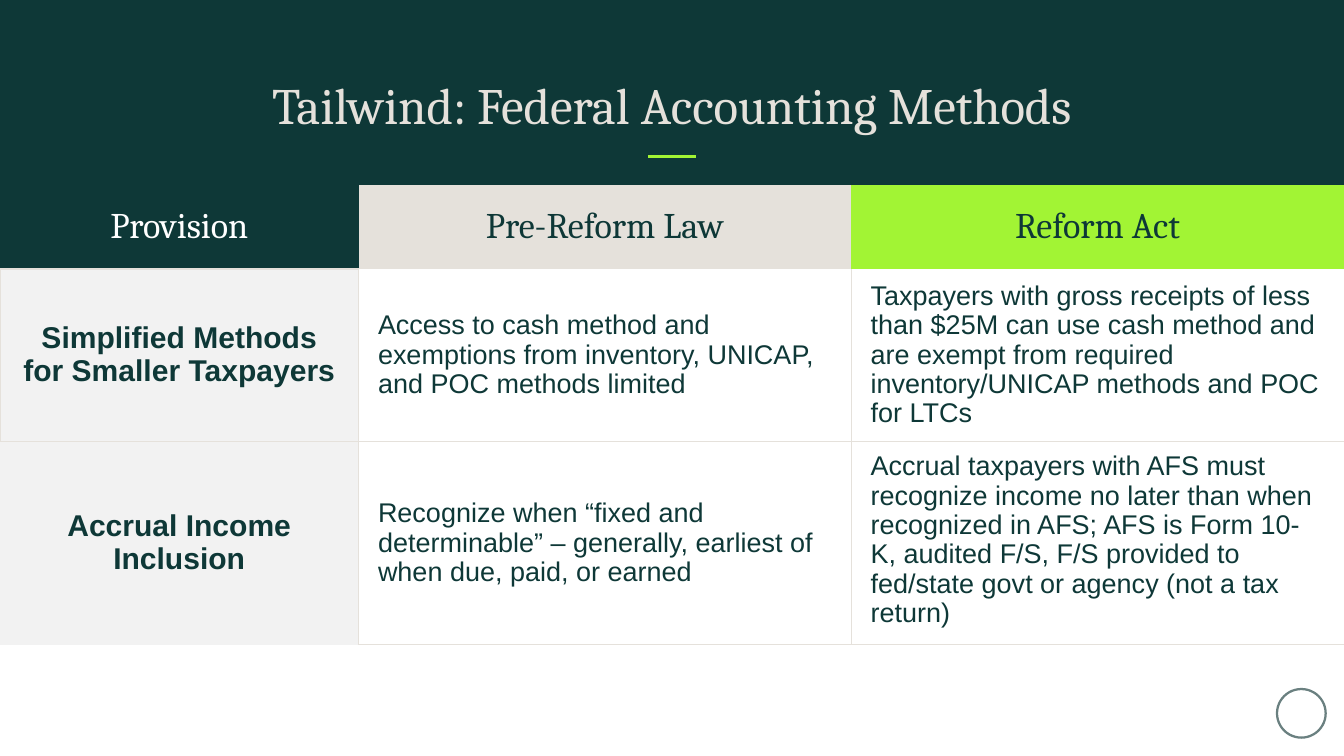
from dataclasses import dataclass

from lxml import etree
from pptx import Presentation
from pptx import util as u
from pptx.dml.color import RGBColor
from pptx.enum import shapes, text
from pptx.oxml.ns import qn


@dataclass(frozen=True)
class Theme:
    dark: str = "0E3837"
    sand: str = "E5E1DB"
    lime: str = "A2F434"
    white: str = "FFFFFF"
    pale: str = "F2F2F2"
    badge: str = "6A8080"
    heading_font: str = "Cambria"
    body_font: str = "Arial"
    title_size: int = 34
    header_size: int = 24
    label_size: int = 20
    body_size: int = 18
    body_spacing: float = 0.97


THEME = Theme()
NO_TABLE_STYLE = "{2D5ABB26-0587-4C30-8999-92F81FD0307C}"


def color(value):
    return RGBColor.from_string(value)


def write(frame, words, *, size, font, ink, bold=False, centered=False, spacing=None):
    """Put one formatted paragraph into a text frame."""
    frame.word_wrap = True
    para = frame.paragraphs[0]
    para.alignment = text.PP_ALIGN.CENTER if centered else text.PP_ALIGN.LEFT
    if spacing:
        para.line_spacing = spacing
    span = para.add_run()
    span.text = words
    span.font.size = u.Pt(size)
    span.font.name = font
    span.font.bold = bold
    span.font.color.rgb = color(ink)


class Page:
    """A slide and its style; lengths are percentages of the slide size."""

    def __init__(self, deck, theme):
        self.theme = theme
        self.width, self.height = deck.slide_width, deck.slide_height
        self.slide = deck.slides.add_slide(deck.slide_layouts[5])
        self.slide.background.fill.solid()
        self.slide.background.fill.fore_color.rgb = color(theme.dark)

    def across(self, share):
        return round(self.width * share / 100)

    def down(self, share):
        return round(self.height * share / 100)

    def area(self, left, top, width, height):
        return self.across(left), self.down(top), self.across(width), self.down(height)

    def title(self, words, *area):
        box = self.slide.shapes.title
        box.left, box.top, box.width, box.height = self.area(*area)
        frame = box.text_frame
        frame.margin_left = frame.margin_right = frame.margin_top = frame.margin_bottom = 0
        frame.vertical_anchor = text.MSO_ANCHOR.BOTTOM
        frame.auto_size = text.MSO_AUTO_SIZE.NONE
        write(frame, words, size=self.theme.title_size, font=self.theme.heading_font,
              ink=self.theme.sand, centered=True)

    def shape(self, kind, *area, fill=None, line=None, weight=1.5):
        box = self.slide.shapes.add_shape(kind, *self.area(*area))
        box.shadow.inherit = False
        if fill:
            box.fill.solid()
            box.fill.fore_color.rgb = color(fill)
        else:
            box.fill.background()
        if line:
            box.line.color.rgb = color(line)
            box.line.width = u.Pt(weight)
        else:
            box.line.fill.background()

    def rule(self, start, end, top, ink, weight):
        line = self.slide.shapes.add_connector(
            shapes.MSO_CONNECTOR.STRAIGHT,
            self.across(start), self.down(top), self.across(end), self.down(top))
        line.line.color.rgb = color(ink)
        line.line.width = u.Pt(weight)
        etree.SubElement(line._element.spPr, qn("a:effectLst"))

    def table(self, left, top, columns, rows, cells):
        frame = self.slide.shapes.add_table(
            len(rows), len(columns), *self.area(left, top, sum(columns), sum(rows)))
        grid = frame.table
        grid.first_row = grid.horz_banding = False
        grid._tbl.tblPr.find(qn("a:tableStyleId")).text = NO_TABLE_STYLE
        for column, share in zip(grid.columns, columns):
            column.width = self.across(share)
        for row, share in zip(grid.rows, rows):
            row.height = self.down(share)
        for row, entries in enumerate(cells):
            for column, entry in enumerate(entries):
                self.cell(grid.cell(row, column), *entry)

    def cell(self, cell, words, style, fill, edges, anchor=text.MSO_ANCHOR.MIDDLE):
        cell.margin_left = cell.margin_right = u.Inches(0.18)
        cell.margin_top = cell.margin_bottom = u.Inches(0.1)
        cell.vertical_anchor = anchor
        if fill:
            cell.fill.solid()
            cell.fill.fore_color.rgb = color(fill)
        else:
            cell.fill.background()
        write(cell.text_frame, words, **style)
        # Borders come before the fill, in the order left, right, top, bottom
        properties = cell._tc.get_or_add_tcPr()
        for place, edge in enumerate(e for e in "LRTB" if e in edges):
            border = etree.Element(qn(f"a:ln{edge}"), w=str(u.Pt(1)))
            paint = etree.SubElement(border, qn("a:solidFill"))
            etree.SubElement(paint, qn("a:srgbClr"), val=self.theme.sand)
            properties.insert(place, border)


def main():
    deck = Presentation()
    deck.slide_width, deck.slide_height = u.Inches(12.44), u.Inches(7)
    page = Page(deck, THEME)

    # Title band and white lower area
    page.shape(shapes.MSO_SHAPE.RECTANGLE, 0, 39.29, 100, 60.71, fill=THEME.white)
    page.title("Tailwind: Federal Accounting Methods", 5.79, 7.14, 88.42, 10.71)
    page.rule(48.21, 51.79, 20.71, THEME.lime, 2)

    # Round badge in the corner
    page.shape(shapes.MSO_SHAPE.OVAL, 95.02, 91.14, 3.62, 6.43, line=THEME.badge)

    # Comparison table
    header = dict(size=THEME.header_size, font=THEME.heading_font, ink=THEME.dark,
                  centered=True)
    body = dict(size=THEME.body_size, font=THEME.body_font, ink=THEME.dark,
                spacing=THEME.body_spacing)
    label = body | dict(size=THEME.label_size, bold=True, centered=True)
    cells = [
        [("Provision", header | dict(ink=THEME.white), None, "B"),
         ("Pre-Reform Law", header, THEME.sand, ""),
         ("Reform Act", header, THEME.lime, "")],
        [("Simplified Methods for Smaller Taxpayers", label, THEME.pale, "LRTB"),
         ("Access to cash method and exemptions from inventory, UNICAP, and POC "
          "methods limited", body, THEME.white, "LRB"),
         ("Taxpayers with gross receipts of less than $25M can use cash method and "
          "are exempt from required inventory/UNICAP methods and POC for LTCs",
          body, THEME.white, "LB")],
        [("Accrual Income Inclusion", label, THEME.pale, "RT"),
         ("Recognize when “fixed and determinable” – generally, earliest of when due, "
          "paid, or earned", body, None, "LRTB"),
         ("Accrual taxpayers with AFS must recognize income no later than when "
          "recognized in AFS; AFS is Form 10-K, audited F/S, F/S provided to fed/state "
          "govt or agency (not a tax return)", body, None, "LTB", text.MSO_ANCHOR.TOP)],
    ]
    page.table(0, 24.43, [26.68, 36.66, 36.66], [11.14, 22.86, 26.86], cells)

    deck.save("out.pptx")


if __name__ == "__main__":
    main()
